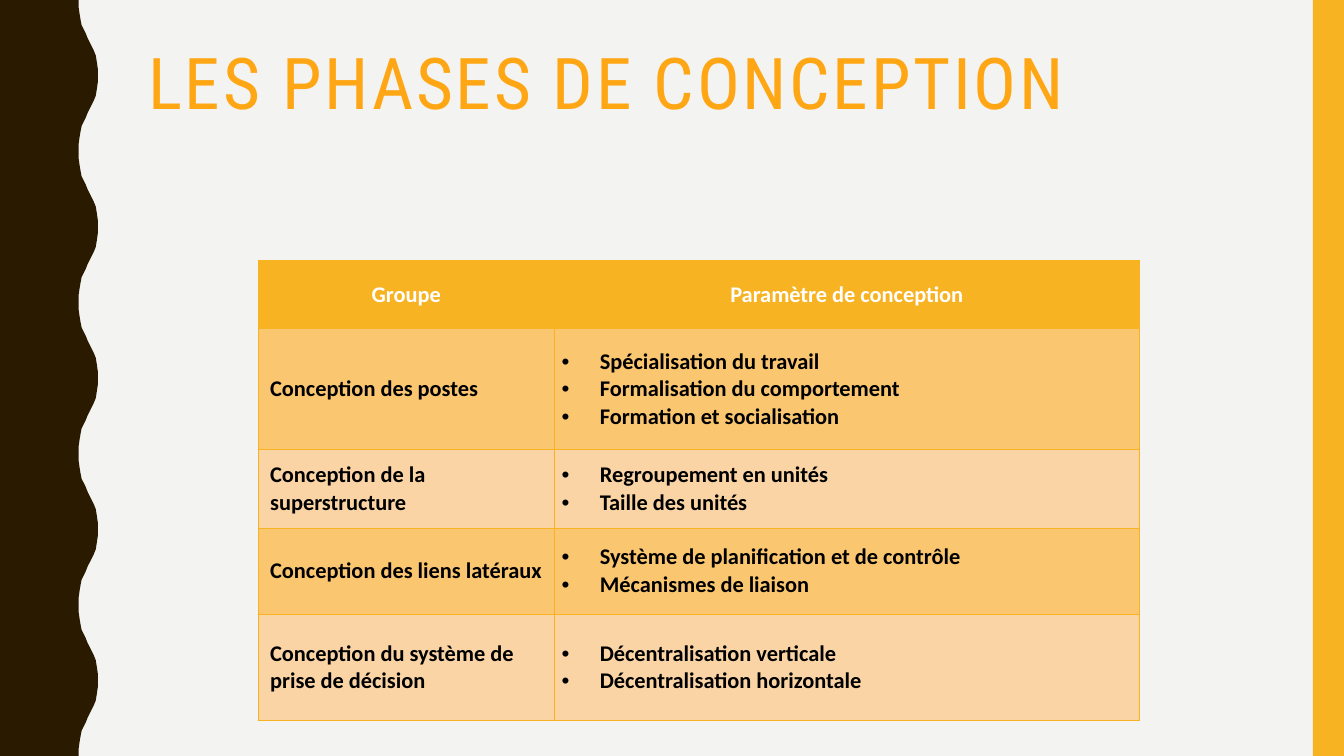
from lxml.etree import SubElement
from pptx import Presentation
from pptx.dml.color import RGBColor
from pptx.enum.shapes import MSO_SHAPE
from pptx.enum.text import MSO_ANCHOR, MSO_AUTO_SIZE, PP_ALIGN
from pptx.oxml.ns import qn
from pptx.util import Inches, Pt

PAPER = RGBColor(0xF3, 0xF3, 0xF2)
BROWN = RGBColor(0x2A, 0x1A, 0x00)
GOLD = RGBColor(0xF8, 0xB3, 0x23)
ORANGE = RGBColor(0xFF, 0xA6, 0x15)
AMBER = RGBColor(0xFB, 0xC6, 0x70)
PEACH = RGBColor(0xFA, 0xD4, 0xA4)
WHITE = RGBColor(0xFF, 0xFF, 0xFF)
BLACK = RGBColor(0x00, 0x00, 0x00)


def paint(shape, color):
    shape.shadow.inherit = False
    shape.fill.solid()
    shape.fill.fore_color.rgb = color
    shape.line.fill.background()


def style_cell(cell, color):
    """Set the fill, thin gold borders, margins and anchor of a cell."""
    props = cell._tc.get_or_add_tcPr()
    for side in ("a:lnL", "a:lnR", "a:lnT", "a:lnB"):
        line = SubElement(props, qn(side), w=str(Pt(0.5)))
        solid = SubElement(line, qn("a:solidFill"))
        SubElement(solid, qn("a:srgbClr"), val=str(GOLD))
    cell.fill.solid()
    cell.fill.fore_color.rgb = color
    cell.margin_left = cell.margin_right = Inches(0.07)
    cell.margin_top = cell.margin_bottom = 0
    cell.vertical_anchor = MSO_ANCHOR.MIDDLE


deck = Presentation()
deck.slide_width = Inches(13.33)
deck.slide_height = Inches(7.5)
slide = deck.slides.add_slide(deck.slide_layouts[5])
slide.background.fill.solid()
slide.background.fill.fore_color.rgb = PAPER

# Wavy left edge: one half wave, mirrored and repeated every 1.5 inches
half = [(0.78, 0), (0.78, 0.07), (0.79, 0.14), (0.8, 0.2), (0.81, 0.25),
        (0.83, 0.29), (0.85, 0.33), (0.87, 0.38), (0.89, 0.42), (0.91, 0.46),
        (0.93, 0.5), (0.95, 0.55), (0.96, 0.61), (0.97, 0.68), (0.97, 0.75)]
wave = half + [(x, 1.5 - y) for x, y in reversed(half[:-1])]
edge = [(Inches(x), Inches(y + 1.5 * turn)) for turn in range(5) for x, y in wave]
outline = slide.shapes.build_freeform(0, 0)
outline.add_line_segments(edge + [(0, Inches(7.5))], close=True)
paint(outline.convert_to_shape(), BROWN)

bar = slide.shapes.add_shape(
    MSO_SHAPE.RECTANGLE, Inches(13.02), 0, Inches(0.31), Inches(7.5))
paint(bar, GOLD)

title = slide.shapes.title
title.left, title.top = Inches(1.37), Inches(0.42)
title.width, title.height = Inches(11.13), Inches(1.63)
frame = title.text_frame
frame.word_wrap = True
frame.auto_size = MSO_AUTO_SIZE.NONE
frame.vertical_anchor = MSO_ANCHOR.TOP
para = frame.paragraphs[0]
para.alignment = PP_ALIGN.LEFT
para.line_spacing = 0.9
run = para.add_run()
run.text = "LES PHASES DE CONCEPTION"
run.font.name = "Roboto Condensed"
run.font.size = Pt(51)
run.font.color.rgb = ORANGE
run.font._element.set("spc", "200")

heads = ["Groupe", "Paramètre de conception"]
groups = [
    ("Conception des postes",
     ["Spécialisation du travail", "Formalisation du comportement",
      "Formation et socialisation"]),
    ("Conception de la superstructure",
     ["Regroupement en unités", "Taille des unités"]),
    ("Conception des liens latéraux",
     ["Système de planification et de contrôle", "Mécanismes de liaison"]),
    ("Conception du système de prise de décision",
     ["Décentralisation verticale", "Décentralisation horizontale"]),
]
rows = [[[head] for head in heads]] + [[[name], items] for name, items in groups]
table = slide.shapes.add_table(
    len(rows), 2, Inches(2.56), Inches(2.58), Inches(8.74), Inches(4.57)).table
for column, width in zip(table.columns, [2.94, 5.8]):
    column.width = Inches(width)
for row, height in zip(table.rows, [0.68, 1.2, 0.78, 0.85, 1.06]):
    row.height = Inches(height)

for r, row in enumerate(rows):
    for c, lines in enumerate(row):
        cell = table.cell(r, c)
        style_cell(cell, GOLD if r == 0 else AMBER if r % 2 else PEACH)
        for i, text in enumerate(lines):
            frame = cell.text_frame
            para = frame.add_paragraph() if i else frame.paragraphs[0]
            props = para._p.get_or_add_pPr()
            if r == 0:
                para.alignment = PP_ALIGN.CENTER
                para.space_before = Pt(6)
                para.space_after = Pt(10)
            elif c == 0:
                props.set("marL", str(Inches(0.05)))
            else:
                para.alignment = PP_ALIGN.JUSTIFY
                props.set("marL", str(Inches(0.38)))
                props.set("indent", str(Inches(-0.38)))
                SubElement(props, qn("a:buFont"), typeface="Arial")
                SubElement(props, qn("a:buChar"), char="•")
            run = para.add_run()
            run.text = text
            run.font.name = "Calibri"
            run.font.size = Pt(16)
            run.font.bold = True
            run.font.color.rgb = BLACK if r else WHITE

deck.save("out.pptx")
